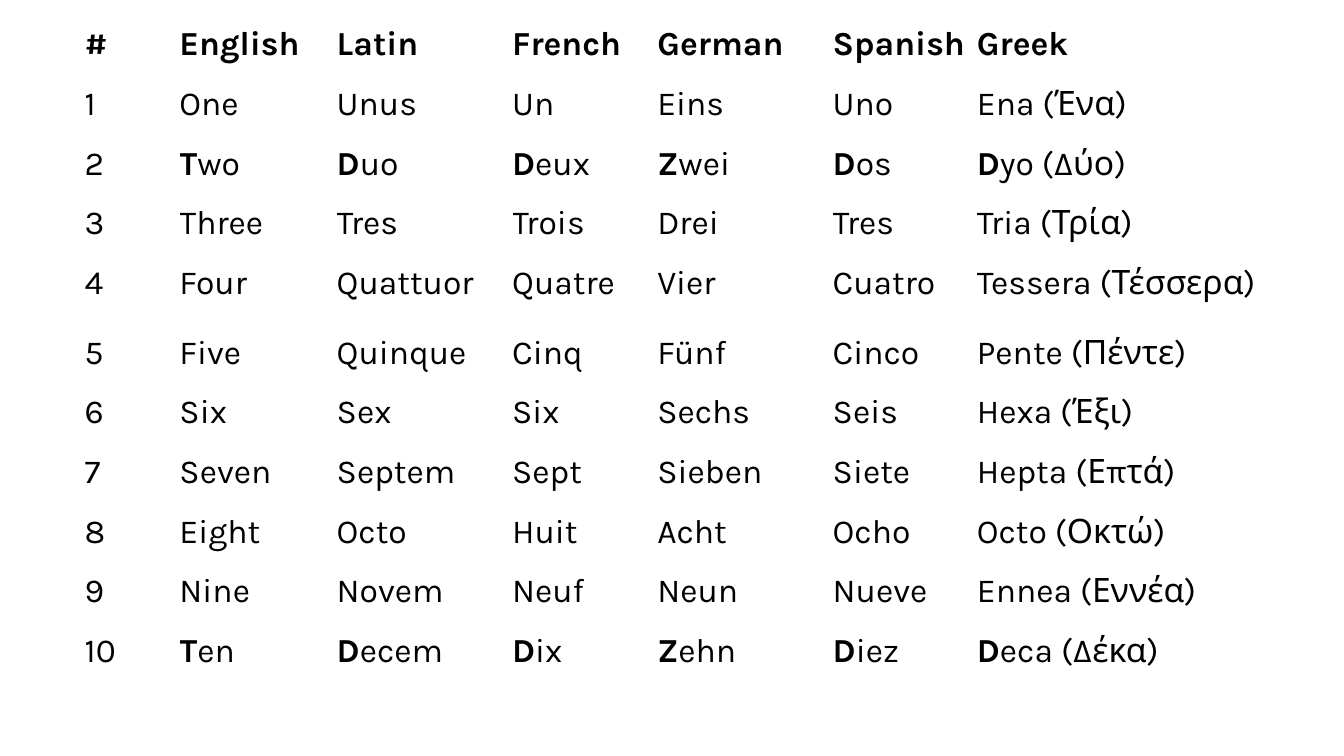
from typing import NamedTuple

from pptx import Presentation
from pptx.dml.color import RGBColor
from pptx.enum.text import MSO_ANCHOR, PP_ALIGN
from pptx.util import Inches, Pt

TOP = MSO_ANCHOR.TOP
LEFT = PP_ALIGN.LEFT
WIDE, HIGH = 13.33, 7.5
FONT, SIZE = "Karla", 24
INK, PAPER = "000000", "FFFFFF"
X, Y = 0.84, 0.25
COLS = [0.94, 1.56, 1.74, 1.44, 1.74, 1.43, 3.34]
TALL, EXTRA = 6.61, 0.1


class Row(NamedTuple):
    words: list[str]
    bold: int = 0
    extra: float = 0


ALL = 99
ROWS = [
    Row(["#", "English", "Latin", "French", "German", "Spanish", "Greek"], bold=ALL),
    Row(["1", "One", "Unus", "Un", "Eins", "Uno", "Ena (Ένα)"]),
    Row(["2", "Two", "Duo", "Deux", "Zwei", "Dos", "Dyo (Δύο)"], bold=1),
    Row(["3", "Three", "Tres", "Trois", "Drei", "Tres", "Tria (Τρία)"]),
    Row(["4", "Four", "Quattuor", "Quatre", "Vier", "Cuatro", "Tessera (Τέσσερα)"], extra=EXTRA),
    Row(["5", "Five", "Quinque", "Cinq", "Fünf", "Cinco", "Pente (Πέντε)"]),
    Row(["6", "Six", "Sex", "Six", "Sechs", "Seis", "Hexa (Έξι)"]),
    Row(["7", "Seven", "Septem", "Sept", "Sieben", "Siete", "Hepta (Επτά)"]),
    Row(["8", "Eight", "Octo", "Huit", "Acht", "Ocho", "Octo (Οκτώ)"]),
    Row(["9", "Nine", "Novem", "Neuf", "Neun", "Nueve", "Ennea (Εννέα)"]),
    Row(["10", "Ten", "Decem", "Dix", "Zehn", "Diez", "Deca (Δέκα)"], bold=1),
]
STEP = (TALL - EXTRA) / len(ROWS)


def tint(code: str) -> RGBColor:
    return RGBColor.from_string(code)


def write(cell, word: str, bold: int) -> None:
    cell.fill.solid()
    cell.fill.fore_color.rgb = tint(PAPER)
    cell.margin_left = cell.margin_right = 0
    cell.margin_top = cell.margin_bottom = 0
    cell.vertical_anchor = TOP
    line = cell.text_frame.paragraphs[0]
    line.alignment = LEFT
    for part, heavy in ((word[:bold], True), (word[bold:], False)):
        if part:
            run = line.add_run()
            run.text = part
            run.font.name = FONT
            run.font.size = Pt(SIZE)
            run.font.bold = heavy
            run.font.color.rgb = tint(INK)


def draw(slide) -> None:
    frame = slide.shapes.add_table(
        len(ROWS), len(COLS), Inches(X), Inches(Y), Inches(sum(COLS)), Inches(TALL))
    table = frame.table
    table.first_row = False
    table.horz_banding = False
    for col, width in zip(table.columns, COLS):
        col.width = Inches(width)
    for i, row in enumerate(ROWS):
        table.rows[i].height = Inches(STEP + row.extra)
        for j, word in enumerate(row.words):
            bold = row.bold if j or row.bold == ALL else 0
            write(table.cell(i, j), word, bold)


def main() -> None:
    deck = Presentation()
    deck.slide_width = Inches(WIDE)
    deck.slide_height = Inches(HIGH)
    draw(deck.slides.add_slide(deck.slide_layouts[6]))
    deck.save("out.pptx")


if __name__ == "__main__":
    main()
